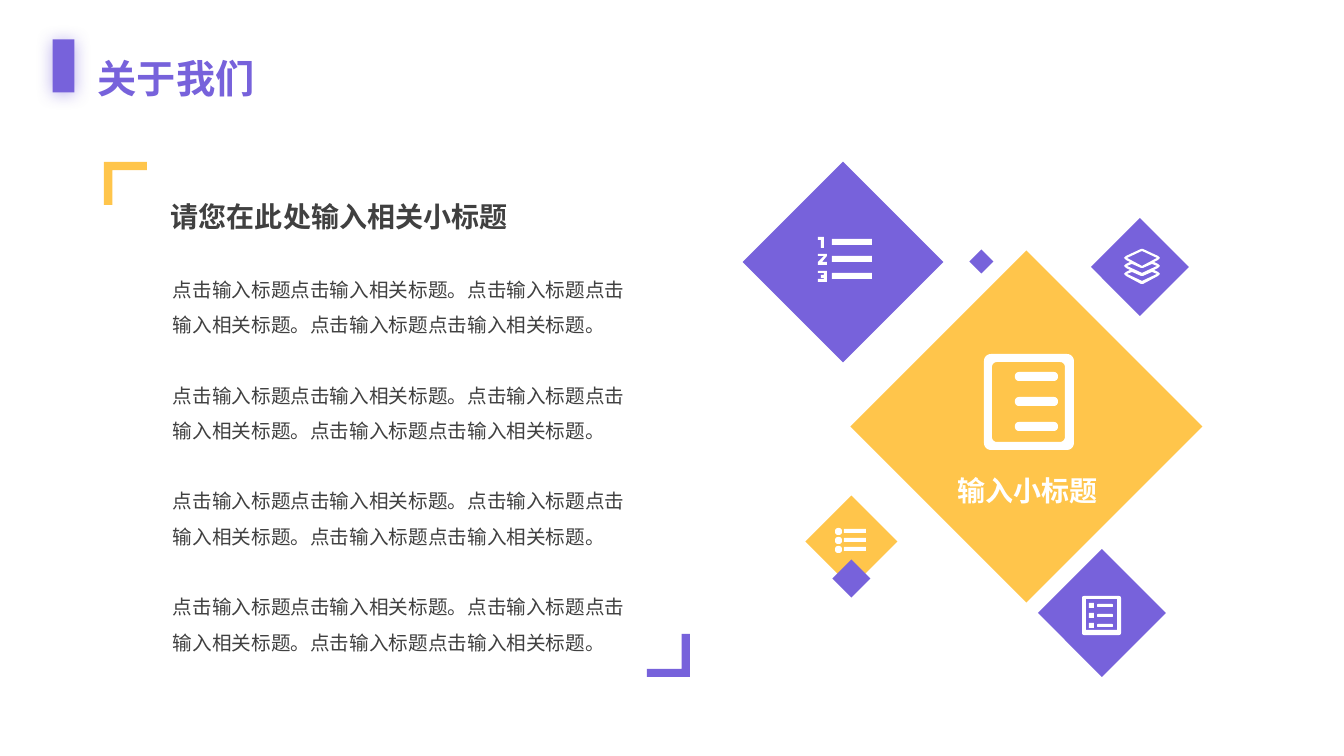
from math import cos, pi, sin

from lxml import etree
from pptx import Presentation
from pptx.dml.color import RGBColor
from pptx.enum.shapes import MSO_SHAPE
from pptx.enum.text import MSO_ANCHOR, MSO_AUTO_SIZE, PP_ALIGN
from pptx.oxml.ns import qn
from pptx.util import Emu, Pt

RECT = MSO_SHAPE.RECTANGLE
DIAMOND = MSO_SHAPE.DIAMOND
CORNER = MSO_SHAPE.CORNER
TOP = MSO_ANCHOR.TOP
GROW = MSO_AUTO_SIZE.SHAPE_TO_FIT_TEXT
FIXED = MSO_AUTO_SIZE.NONE
LEFT, CENTER, JUSTIFY = PP_ALIGN.LEFT, PP_ALIGN.CENTER, PP_ALIGN.JUSTIFY

SCALE = 914400 / 100.8
FONT = "Noto Sans CJK SC"
PURPLE, YELLOW, DARK, WHITE = "7762DB", "FFC54B", "404040", "FFFFFF"
BODY = "点击输入标题点击输入相关标题。" * 3


def px(value):
    return Emu(round(value * SCALE))


def paint(shape, color):
    shape.shadow.inherit = False
    shape.fill.solid()
    shape.fill.fore_color.rgb = RGBColor.from_string(color)
    shape.line.fill.background()


def add_box(slide, kind, x, y, w, h, color, turn=0):
    shape = slide.shapes.add_shape(kind, px(x), px(y), px(w), px(h))
    shape.rotation = turn
    paint(shape, color)
    return shape


def add_tile(slide, x, y, side, color):
    add_box(slide, RECT, x, y, side, side, color, 315)


def add_corner(slide, x, y, color, turn):
    shape = add_box(slide, CORNER, x, y, 43, 43, color, turn)
    shape.adjustments[0] = 0.194
    shape.adjustments[1] = 0.19


def add_glow(shape, color):
    effects = shape._element.spPr.find(qn("a:effectLst"))
    glow = etree.SubElement(effects, qn("a:outerShdw"), blurRad=str(Pt(12)),
                            dist=str(Pt(1)), dir="5400000", algn="ctr", rotWithShape="0")
    tint = etree.SubElement(glow, qn("a:srgbClr"), val=color)
    etree.SubElement(tint, qn("a:alpha"), val="50000")


def add_text(slide, text, x, y, w, h, size=14, color=DARK, bold=False,
             align=LEFT, lead=1.0, gap=0, wrap=True, fit=FIXED):
    frame = slide.shapes.add_textbox(px(x), px(y), px(w), px(h)).text_frame
    frame.word_wrap = wrap
    frame.auto_size = fit
    frame.vertical_anchor = TOP
    frame.text = text
    for index, para in enumerate(frame.paragraphs):
        para.alignment = align
        para.line_spacing = lead
        if index and gap:
            para.space_before = Pt(gap)
        for run in para.runs:
            font = run.font
            font.size, font.bold, font.name = Pt(size), bold, FONT
            font.color.rgb = RGBColor.from_string(color)
            etree.SubElement(font._element, qn("a:ea"), typeface=FONT)


def block(x, y, w, h, r=0):
    if not r:
        return [(x, y), (x + w, y), (x + w, y + h), (x, y + h)]
    mids = [(x + w - r, y + h - r), (x + r, y + h - r), (x + r, y + r), (x + w - r, y + r)]
    return [(cx + r * cos(a), cy + r * sin(a))
            for turn, (cx, cy) in enumerate(mids)
            for a in [(turn + step / 6) * pi / 2 for step in range(7)]]


def stack(count, pitch, x, y, w, h, r=0):
    return [block(x, y + row * pitch, w, h, r) for row in range(count)]


def mirror(mid, half):
    right = [(mid + dx, y) for dx, y in half]
    return right + [(mid - dx, y) for dx, y in reversed(half)]


def add_icon(slide, paths):
    scaled = [[(px(x), px(y)) for x, y in path] for path in paths]
    pen = slide.shapes.build_freeform(*scaled[0][0], scale=1.0)
    for index, path in enumerate(scaled):
        if index:
            pen.move_to(*path[0])
        pen.add_line_segments(path[1:], close=True)
    paint(pen.convert_to_shape(), WHITE)


def add_icons(slide):
    add_icon(slide, [block(1082, 596, 39, 39, 2), block(1086, 599, 31, 31)]
             + stack(3, 10, 1089, 603, 5, 5) + stack(3, 10, 1097, 604, 16, 3, 1))
    one = [(821, 248), (824, 248), (824, 237), (818, 237), (818, 240), (821, 240)]
    two = [(818, 256), (824, 256), (818, 262), (818, 265), (827, 265),
           (827, 262), (822, 262), (827, 256), (827, 254), (818, 254)]
    three = [(818, 273), (824, 273), (824, 275), (821, 275), (821, 278), (824, 278),
             (824, 279), (818, 279), (818, 282), (827, 282), (827, 271), (818, 271)]
    add_icon(slide, [one, two, three] + stack(3, 17, 832, 239, 40, 6))
    edge = [(1, 249), (16, 256), (18, 258), (16, 260), (12, 262), (16, 264), (18, 266),
            (16, 268), (12, 270), (16, 272), (18, 274), (16, 276), (1, 284)]
    holes = [[(0, 251), (15, 258), (0, 266)]]
    holes += [[(1, y + 4), (10, y), (15, y + 2), (0, y + 9)] for y in (264, 272)]
    add_icon(slide, [mirror(1142, half) for half in [edge] + holes])
    add_icon(slide, stack(3, 9, 835, 528, 7, 7, 3) + stack(3, 9, 844, 529, 22, 4))


def main():
    deck = Presentation()
    deck.slide_width, deck.slide_height = px(1344), px(756)
    slide = deck.slides.add_slide(deck.slide_layouts[6])

    add_glow(add_box(slide, RECT, 37, 55, 53, 22, PURPLE, 90), PURPLE)
    add_text(slide, "关于我们", 88, 26, 245, 74, size=28, color=PURPLE,
             bold=True, align=JUSTIFY, lead=1.5, fit=GROW)

    add_tile(slide, 819, 509, 65, YELLOW)
    add_tile(slide, 772, 191, 142, PURPLE)
    add_text(slide, "请您在此处输入相关小标题", 161, 195, 486, 43, size=20, bold=True)
    add_text(slide, "\n".join([BODY] * 4), 163, 261, 486, 412, lead=1.5, gap=25.2)
    add_corner(slide, 104, 162, YELLOW, 90)
    add_corner(slide, 647, 634, PURPLE, 270)
    add_tile(slide, 838, 565, 27, PURPLE)
    add_tile(slide, 973, 253, 17, PURPLE)
    add_box(slide, DIAMOND, 1038, 549, 128, 128, PURPLE)
    add_box(slide, DIAMOND, 1091, 218, 98, 98, PURPLE)
    add_icons(slide)

    add_tile(slide, 902, 302, 249, YELLOW)
    add_text(slide, "输入小标题", 947, 462, 161, 48, size=20, color=WHITE,
             bold=True, align=CENTER, lead=1.2, wrap=False, fit=GROW)
    add_icon(slide, [block(984, 354, 90, 96, 7), block(992, 362, 73, 80, 5)]
             + stack(3, 25, 1015, 372, 43, 9, 4))
    deck.save("out.pptx")


if __name__ == "__main__":
    main()
